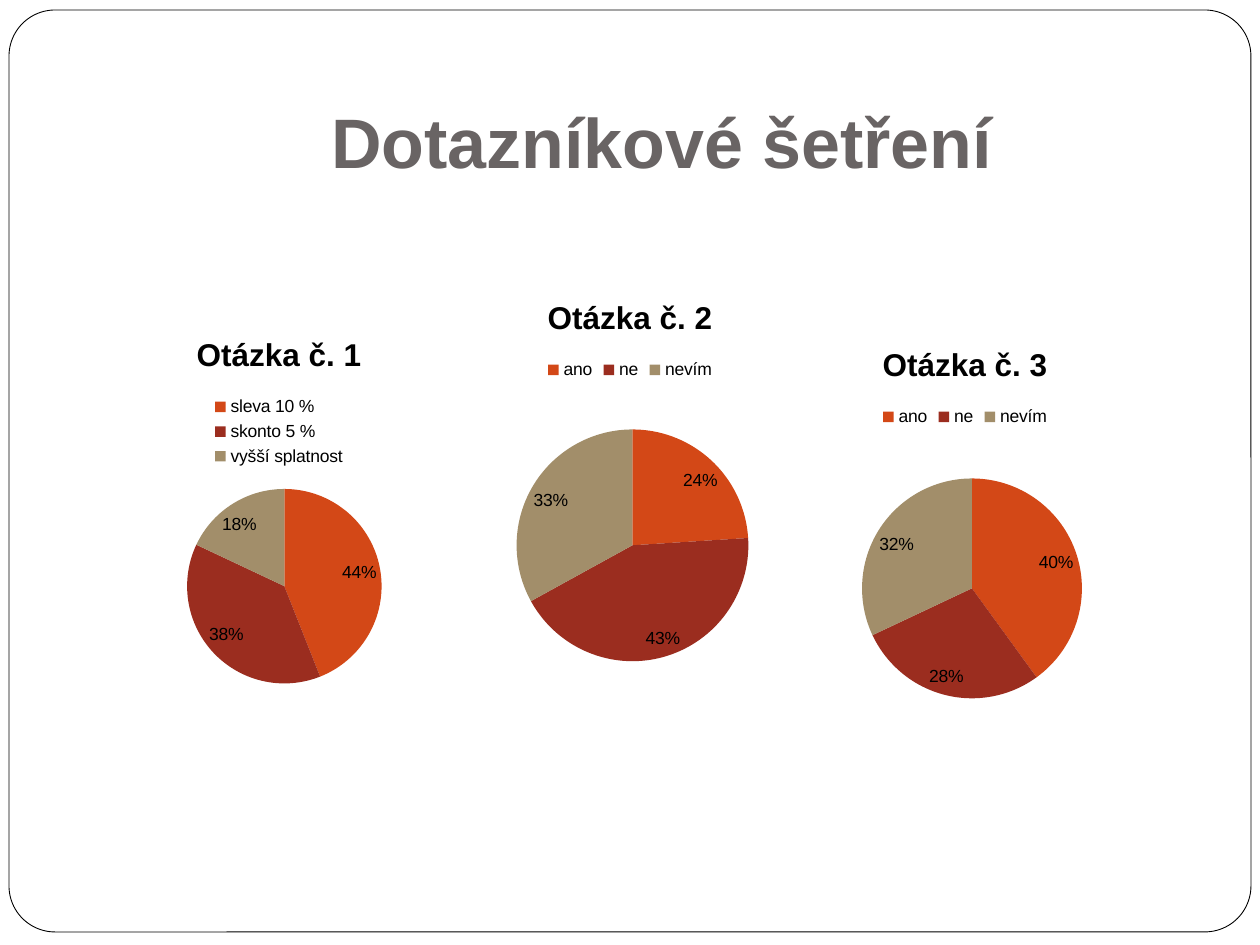
from lxml import etree
from pptx import Presentation
from pptx.chart.data import CategoryChartData
from pptx.dml.color import RGBColor
from pptx.enum.chart import XL_CHART_TYPE, XL_LABEL_POSITION, XL_LEGEND_POSITION
from pptx.enum.shapes import MSO_SHAPE
from pptx.enum.text import MSO_ANCHOR, PP_ALIGN
from pptx.oxml.ns import qn
from pptx.util import Pt

PIE = XL_CHART_TYPE.PIE
BEST_FIT = XL_LABEL_POSITION.BEST_FIT
LEGEND_TOP = XL_LEGEND_POSITION.TOP
ROUNDED = MSO_SHAPE.ROUNDED_RECTANGLE
BOTTOM = MSO_ANCHOR.BOTTOM
CENTER = PP_ALIGN.CENTER

PX = 914400 / 126
FONT = "Arial"
COLORS = {
    "paper": "FFFFFF",
    "ink": "000000",
    "title": "696464",
    "orange": "D34817",
    "red": "9B2D1F",
    "tan": "A28E6A",
}
SLICES = ("orange", "red", "tan")

# Box in px, title, answers with their shares, plot area as fractions of the box
QUESTIONS = [
    ((144, 314, 270, 389), "Otázka č. 1",
     {"sleva 10 %": 44, "skonto 5 %": 38, "vyšší splatnost": 18},
     (0.09, 0.45, 0.86, 0.5)),
    ((504, 277, 252, 389), "Otázka č. 2",
     {"ano": 24, "ne": 43, "nevím": 33},
     (0.05, 0.38, 0.92, 0.62)),
    ((848, 324, 234, 389), "Otázka č. 3",
     {"ano": 40, "ne": 28, "nevím": 32},
     (0.06, 0.36, 0.94, 0.64)),
]


def px(*lengths):
    return [round(n * PX) for n in lengths]


def rgb(name):
    return RGBColor.from_string(COLORS[name])


def style_font(font, size, color="ink", bold=False):
    font.name = FONT
    font.size = Pt(size)
    font.bold = bold
    font.color.rgb = rgb(color)


def write(tf, text, align=CENTER, **style):
    p = tf.paragraphs[0]
    p.alignment = align
    r = p.add_run()
    r.text = text
    style_font(r.font, **style)


def add_frame(s, box):
    sp = s.shapes.add_shape(ROUNDED, *px(*box))
    sp.shadow.inherit = False
    sp.adjustments[0] = 0.05
    sp.fill.solid()
    sp.fill.fore_color.rgb = rgb("paper")
    sp.line.color.rgb = rgb("ink")
    sp.line.width = Pt(0.5)


def add_title(s, box, text):
    tf = s.shapes.add_textbox(*px(*box)).text_frame
    tf.word_wrap = True
    tf.vertical_anchor = BOTTOM
    tf.margin_bottom = tf.margin_left
    write(tf, text, size=40, color="title", bold=True)


def set_plot_layout(chart, plot):
    area = chart._chartSpace.chart.plotArea
    for old in area.findall(qn("c:layout")):
        area.remove(old)
    layout = etree.Element(qn("c:layout"))
    manual = etree.SubElement(layout, qn("c:manualLayout"))
    values = [("layoutTarget", "inner"), ("xMode", "edge"), ("yMode", "edge")]
    values += zip("xywh", plot)
    for tag, value in values:
        etree.SubElement(manual, qn(f"c:{tag}")).set("val", str(value))
    area.insert(0, layout)


def add_question(s, box, title, answers, plot):
    data = CategoryChartData()
    data.categories = list(answers)
    data.add_series(title, list(answers.values()))
    chart = s.shapes.add_chart(PIE, *px(*box), data).chart
    style_font(chart.font, 10)

    # Title and legend
    chart.has_title = True
    write(chart.chart_title.text_frame, title, size=18, bold=True)
    chart.chart_title.include_in_layout = False
    chart.has_legend = True
    chart.legend.position = LEGEND_TOP
    chart.legend.include_in_layout = False
    style_font(chart.legend.font, 10)

    # Slices and percentages
    pie = chart.plots[0]
    pie.vary_by_categories = True
    for i, color in enumerate(SLICES):
        fill = pie.series[0].points[i].format.fill
        fill.solid()
        fill.fore_color.rgb = rgb(color)
    labels = pie.series[0].data_labels
    labels.show_percentage = True
    labels.show_value = False
    labels.number_format = "0%"
    labels.number_format_is_linked = False
    labels.position = BEST_FIT
    style_font(labels.font, 10)
    set_plot_layout(chart, plot)


def main():
    prs = Presentation()
    prs.slide_width, prs.slide_height = px(1260, 945)
    s = prs.slides.add_slide(prs.slide_layouts[6])
    add_frame(s, (9, 10, 1242, 922))
    add_title(s, (126, 38, 1071, 157), "Dotazníkové šetření")
    for question in QUESTIONS:
        add_question(s, *question)
    prs.save("out.pptx")


if __name__ == "__main__":
    main()
